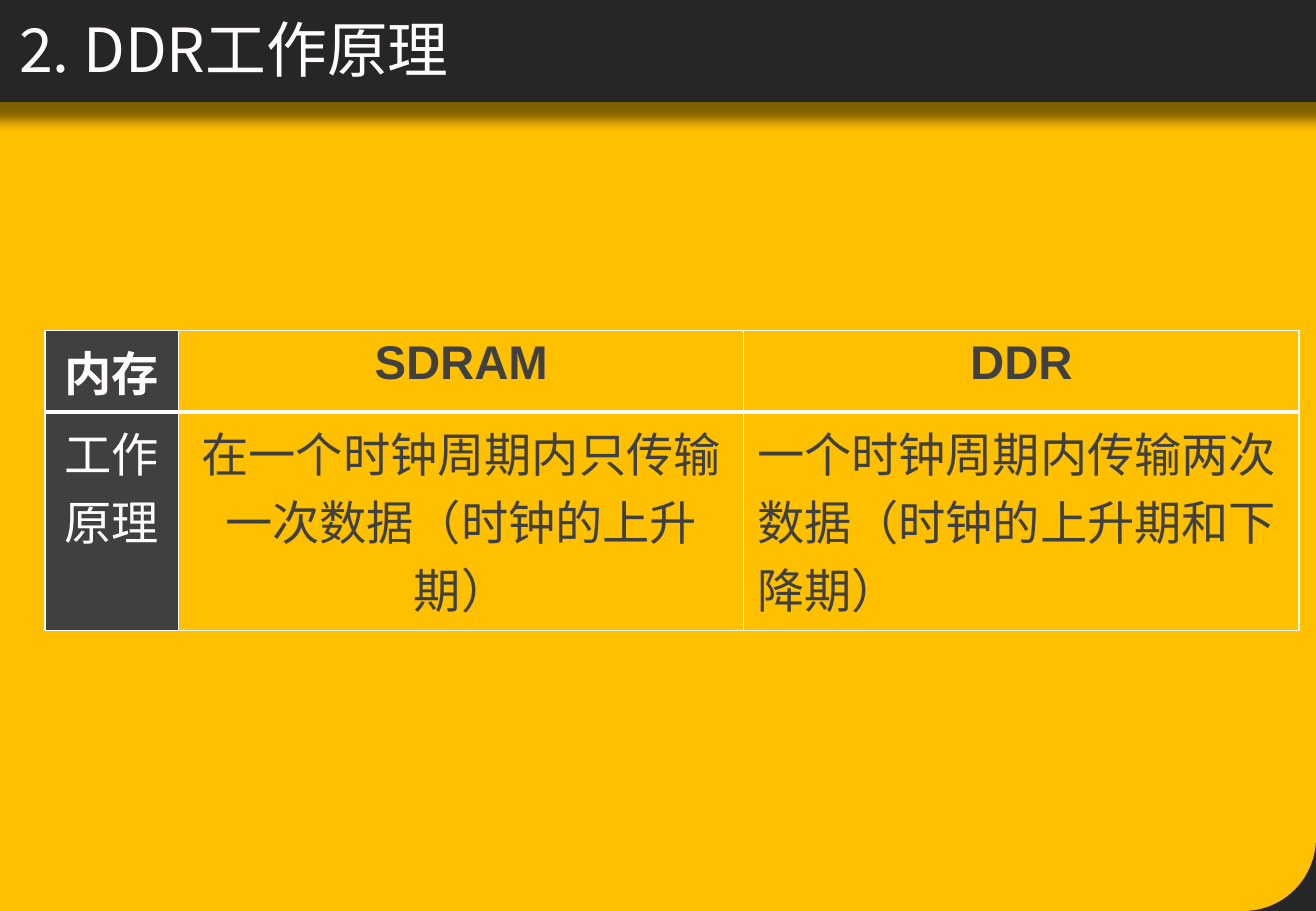
from pptx import Presentation
from pptx.dml.color import RGBColor
from pptx.enum.shapes import MSO_SHAPE
from pptx.enum.text import MSO_ANCHOR, PP_ALIGN
from pptx.oxml import parse_xml
from pptx.oxml.ns import nsdecls
from pptx.util import Inches, Pt

WHITE = RGBColor(0xFF, 0xFB, 0xFB)
DARK = RGBColor(0x26, 0x26, 0x26)
GREY = RGBColor(0x40, 0x40, 0x40)
YELLOW = RGBColor(0xFF, 0xC0, 0x00)
WIDTH, HEIGHT, HEADER = 10.83, 7.5, 0.84
COLUMNS = (1.1, 4.65, 4.57)
ROWS = (0.67, 1.8)
CHINESE_FONT = "Noto Sans CJK SC"
TITLE_FORMAT = {"name": CHINESE_FONT, "size": Pt(36), "bold": False}
HEADING_FORMAT = {"name": "Arial", "size": Pt(28), "bold": True}
BODY_FORMAT = {**HEADING_FORMAT, "bold": False}
CONTENT = (
    (("内存",), ("SDRAM",), ("DDR",)),
    (
        ("工作", "原理"),
        ("在一个时钟周期内只传输一次数据（时钟的上升期）",),
        ("一个时钟周期内传输两次数据（时钟的上升期和下降期）",),
    ),
)


def add_panel(page, kind, top, height, color):
    """Add a full-width panel without outline."""
    panel = page.shapes.add_shape(kind, 0, Inches(top), Inches(WIDTH), Inches(height))
    panel.shadow.inherit = False
    panel.fill.solid()
    panel.fill.fore_color.rgb = color
    panel.line.fill.background()
    return panel


def add_soft_shadow(panel):
    """Let a panel cast a soft shadow downwards."""
    effects = panel.element.spPr.find("{*}effectLst")
    effects.append(parse_xml(
        f'<a:outerShdw {nsdecls("a")} blurRad="{Inches(0.1)}" dist="{Inches(0.14)}" '
        'dir="5400000" sx="104000" algn="t" rotWithShape="0"><a:srgbClr val="000000">'
        '<a:alpha val="50000"/></a:srgbClr></a:outerShdw>'
    ))


def write_text(frame, lines, formats, color, alignment):
    """Write each line as a formatted paragraph."""
    for index, line in enumerate(lines):
        para = frame.add_paragraph() if index else frame.paragraphs[0]
        para.alignment = alignment
        span = para.add_run()
        span.text = line
        for name, value in formats.items():
            setattr(span.font, name, value)
        span.font.color.rgb = color
        span.font._element.append(
            parse_xml(f'<a:ea {nsdecls("a")} typeface="{CHINESE_FONT}"/>')
        )


def add_borders(cell, widths):
    """Draw the left, right, top and bottom borders of a cell."""
    properties = cell._tc.get_or_add_tcPr()
    for side, width in zip("LRTB", widths):
        properties.append(parse_xml(
            f'<a:ln{side} {nsdecls("a")} w="{Pt(width)}"><a:solidFill>'
            f'<a:srgbClr val="{WHITE}"/></a:solidFill></a:ln{side}>'
        ))


def add_background(page):
    """Add the dark base, the yellow sheet and the header bar."""
    page.background.fill.solid()
    page.background.fill.fore_color.rgb = WHITE
    add_panel(page, MSO_SHAPE.RECTANGLE, HEADER, HEIGHT - HEADER, DARK)
    sheet = add_panel(page, MSO_SHAPE.ROUND_1_RECTANGLE, HEADER, HEIGHT - HEADER, YELLOW)
    sheet.adjustments[0] = 0.09
    sheet.rotation = 180
    sheet.element.spPr.xfrm.set("flipH", "1")
    add_soft_shadow(add_panel(page, MSO_SHAPE.RECTANGLE, 0, HEADER, DARK))


def add_title(page, title):
    """Add the slide title over the header bar."""
    box = page.shapes.add_textbox(Inches(0.06), Inches(-0.11), Inches(9.75), Inches(1.01))
    box.text_frame.word_wrap = True
    box.text_frame.vertical_anchor = MSO_ANCHOR.MIDDLE
    write_text(box.text_frame, (title,), TITLE_FORMAT, WHITE, PP_ALIGN.LEFT)


def add_comparison(page):
    """Add the table that compares both memory types."""
    table = page.shapes.add_table(
        len(ROWS), len(COLUMNS), Inches(0.37), Inches(2.72),
        Inches(sum(COLUMNS)), Inches(sum(ROWS)),
    ).table
    table.first_row = table.horz_banding = False
    for column, width in zip(table.columns, COLUMNS):
        column.width = Inches(width)
    for row, height in zip(table.rows, ROWS):
        row.height = Inches(height)
    for i, texts in enumerate(CONTENT):
        for j, lines in enumerate(texts):
            cell = table.cell(i, j)
            cell.margin_left = cell.margin_right = Inches(0.11)
            add_borders(cell, (1, 1, 3, 1) if i else (1, 1, 1, 3))
            cell.fill.solid()
            cell.fill.fore_color.rgb = YELLOW if j else GREY
            write_text(
                cell.text_frame, lines,
                BODY_FORMAT if i else HEADING_FORMAT,
                GREY if j else WHITE,
                PP_ALIGN.LEFT if (i, j) == (1, 2) else PP_ALIGN.CENTER,
            )


def main():
    """Build and save the deck."""
    deck = Presentation()
    deck.slide_width, deck.slide_height = Inches(WIDTH), Inches(HEIGHT)
    page = deck.slides.add_slide(deck.slide_layouts[6])
    add_background(page)
    add_title(page, "2. DDR工作原理")
    add_comparison(page)
    deck.save("out.pptx")


if __name__ == "__main__":
    main()
